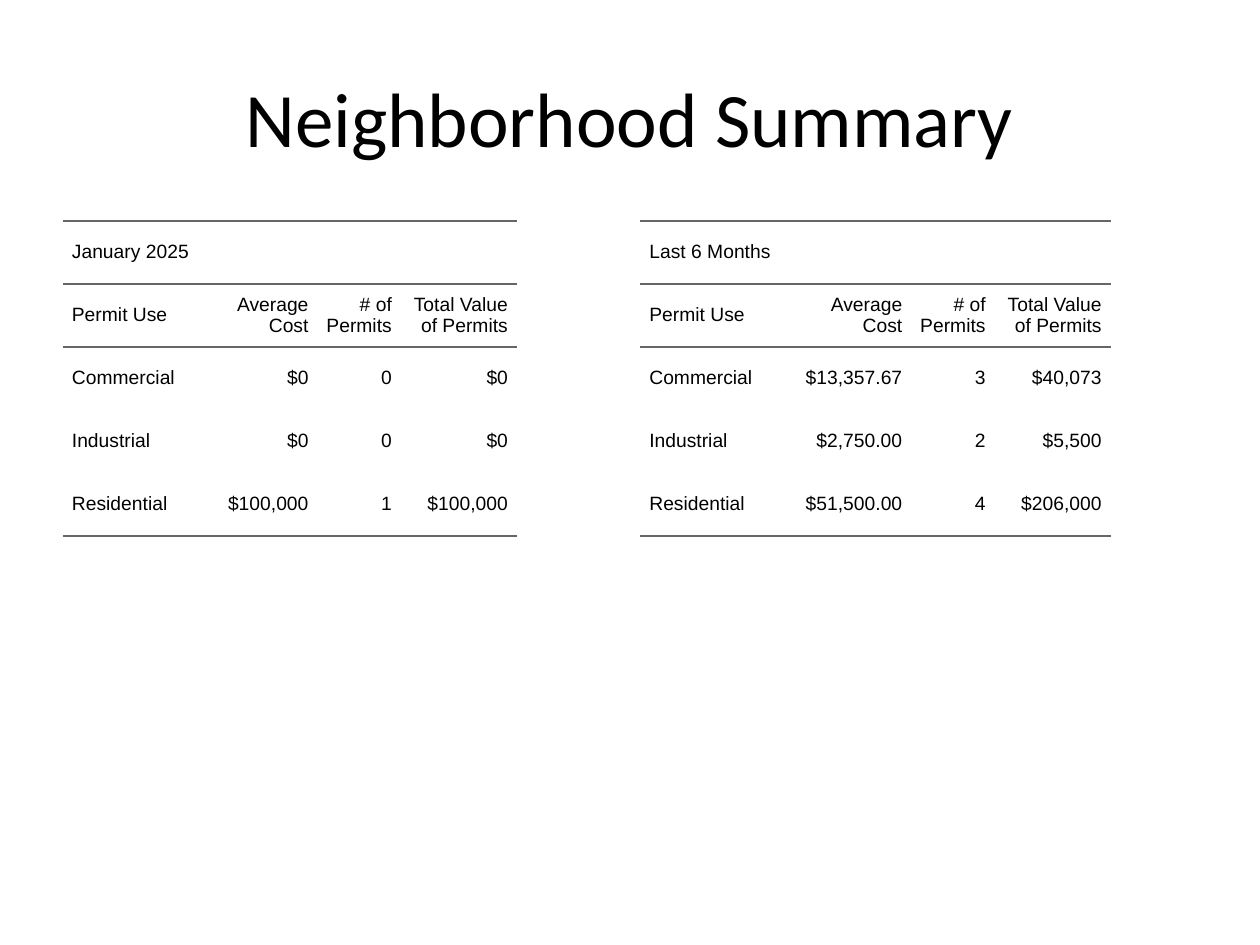
from dataclasses import dataclass

from lxml.etree import SubElement
from pptx import Presentation
from pptx.dml.color import RGBColor
from pptx.enum.text import MSO_ANCHOR, PP_ALIGN
from pptx.oxml.ns import qn
from pptx.util import Cm, Pt


@dataclass(frozen=True)
class Theme:
    text: RGBColor = RGBColor(0x00, 0x00, 0x00)
    rule: str = "666666"
    title_font: str = "Calibri"
    body_font: str = "Arial"
    title_size: int = 44
    body_size: int = 11
    rule_width: float = 1.5


THEME = Theme()
PADDING = Cm(0.18)
ROW_HEIGHT = Cm(1.27)
HEADER = ["Permit Use", "Average Cost", "# of Permits", "Total Value of Permits"]


def set_text(tf, text, font=THEME.body_font, size=THEME.body_size,
             color=THEME.text, align=PP_ALIGN.LEFT, space=0, margin=0):
    p = tf.paragraphs[0]
    p.alignment = align
    p.space_before = p.space_after = Pt(space)
    pPr = p._p.get_or_add_pPr()
    pPr.set("marL", str(margin))
    pPr.set("marR", str(margin))
    pPr.set("indent", "0")
    r = p.add_run()
    r.text = text
    r.font.name = font
    r.font.size = Pt(size)
    r.font.color.rgb = color


def set_borders(cell, ruled):
    """Rule the named sides and clear the others."""
    tcPr = cell._tc.get_or_add_tcPr()
    for side in "LRTB":
        ln = SubElement(tcPr, qn(f"a:ln{side}"))
        if side in ruled:
            ln.set("w", str(Pt(THEME.rule_width)))
            fill = SubElement(ln, qn("a:solidFill"))
            SubElement(fill, qn("a:srgbClr")).set("val", THEME.rule)
        else:
            ln.set("w", "0")
            SubElement(ln, qn("a:noFill"))


def format_cell(cell, ruled):
    cell.vertical_anchor = MSO_ANCHOR.MIDDLE
    cell.margin_left = cell.margin_right = 0
    cell.margin_top = cell.margin_bottom = PADDING
    set_borders(cell, ruled)
    cell.fill.background()


def add_title(s, text):
    sp = s.shapes.title
    sp.left, sp.top, sp.width, sp.height = Cm(1.27), Cm(0.76), Cm(22.86), Cm(3.18)
    tf = sp.text_frame
    tf.vertical_anchor = MSO_ANCHOR.MIDDLE
    set_text(tf, text, font=THEME.title_font, size=THEME.title_size,
             align=PP_ALIGN.CENTER)


def add_permit_table(s, left, period, cost_width, data):
    rows = [[period], HEADER, *data]
    last = len(rows) - 1
    sp = s.shapes.add_table(len(rows), len(HEADER), left, Cm(4.45), Cm(11.23), Cm(12.57))
    table = sp.table
    table.first_row = table.horz_banding = False
    for column, width in zip(table.columns, [Cm(2.79), cost_width, Cm(1.68), Cm(2.34)]):
        column.width = width

    # Rules frame the two heading rows and close the table
    for i, row in enumerate(rows):
        table.rows[i].height = ROW_HEIGHT
        ruled = "TB" if i < 2 else "T" if i == 2 else "B" if i == last else ""
        for cell in table.rows[i].cells:
            format_cell(cell, ruled)
        for j, text in enumerate(row):
            set_text(table.cell(i, j).text_frame, text, space=5, margin=PADDING,
                     align=PP_ALIGN.RIGHT if j else PP_ALIGN.LEFT)
    table.cell(0, 0).merge(table.cell(0, len(HEADER) - 1))


def main():
    prs = Presentation()
    prs.slide_width, prs.slide_height = Cm(25.4), Cm(19.05)
    s = prs.slides.add_slide(prs.slide_layouts[5])
    add_title(s, "Neighborhood Summary")

    # Current month
    add_permit_table(s, Cm(1.27), "January 2025", Cm(2.34), [
        ["Commercial", "$0", "0", "$0"],
        ["Industrial", "$0", "0", "$0"],
        ["Residential", "$100,000", "1", "$100,000"],
    ])

    # Half-year comparison
    add_permit_table(s, Cm(12.91), "Last 6 Months", Cm(2.67), [
        ["Commercial", "$13,357.67", "3", "$40,073"],
        ["Industrial", "$2,750.00", "2", "$5,500"],
        ["Residential", "$51,500.00", "4", "$206,000"],
    ])
    prs.save("out.pptx")


if __name__ == "__main__":
    main()
